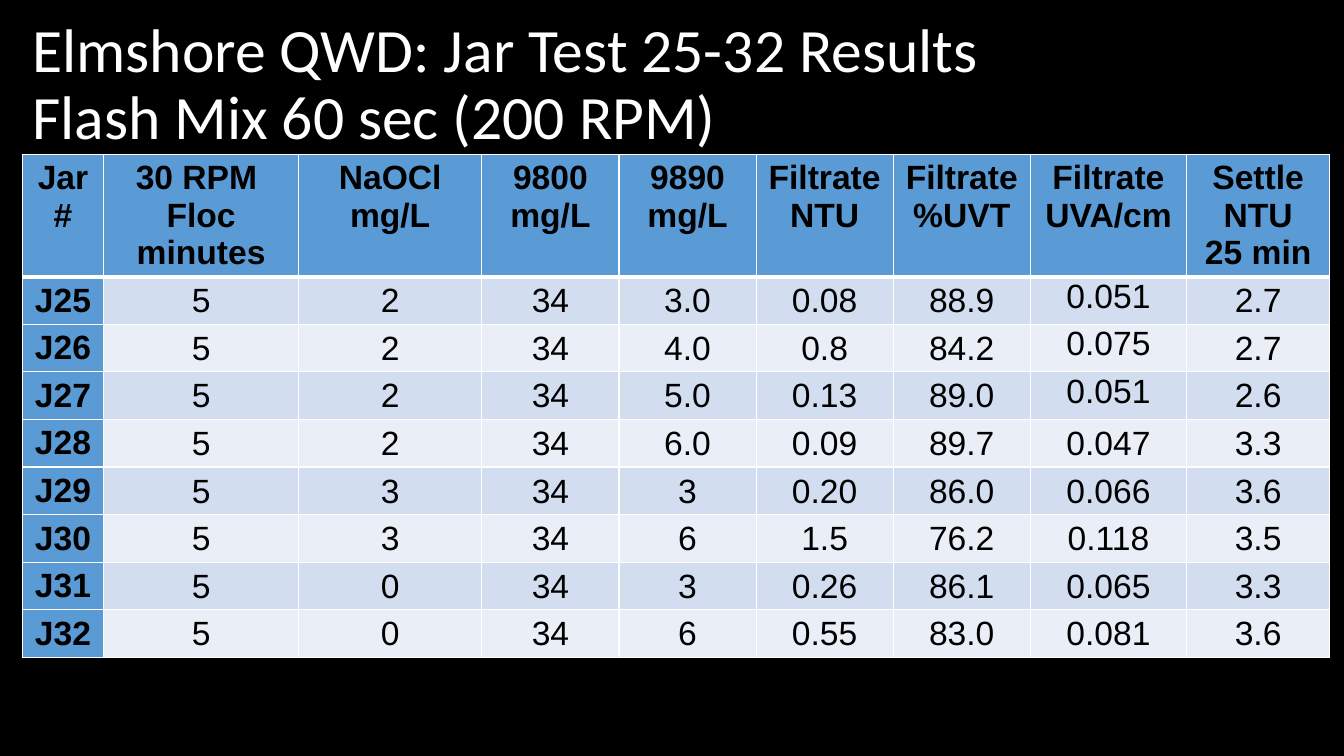
from lxml.etree import SubElement
from pptx import Presentation
from pptx.dml.color import RGBColor
from pptx.enum.text import MSO_ANCHOR, MSO_AUTO_SIZE, PP_ALIGN
from pptx.oxml.ns import qn
from pptx.util import Inches, Pt

COLORS = {
    "background": "000000",
    "title": "FFFFFF",
    "text": "000000",
    "border": "FFFFFF",
    "header": "5B9BD5",
    "odd_row": "D2DEEF",
    "even_row": "EAEFF7",
}

TITLE = "Elmshore QWD: Jar Test 25-32 Results\vFlash Mix 60 sec (200 RPM)"
# "\n" starts a paragraph, "\v" breaks a line
HEADERS = ["Jar\v#", "30 RPM \nFloc\nminutes", "NaOCl\nmg/L", "9800\nmg/L",
           "9890\nmg/L", "Filtrate\nNTU", "Filtrate\n%UVT",
           "Filtrate\nUVA/cm", "Settle\nNTU\n25 min"]
JARS = [
    ["J25", "5", "2", "34", "3.0", "0.08", "88.9", "0.051", "2.7"],
    ["J26", "5", "2", "34", "4.0", "0.8", "84.2", "0.075", "2.7"],
    ["J27", "5", "2", "34", "5.0", "0.13", "89.0", "0.051", "2.6"],
    ["J28", "5", "2", "34", "6.0", "0.09", "89.7", "0.047", "3.3"],
    ["J29", "5", "3", "34", "3", "0.20", "86.0", "0.066", "3.6"],
    ["J30", "5", "3", "34", "6", "1.5", "76.2", "0.118", "3.5"],
    ["J31", "5", "0", "34", "3", "0.26", "86.1", "0.065", "3.3"],
    ["J32", "5", "0", "34", "6", "0.55", "83.0", "0.081", "3.6"],
]
COLUMN_WIDTHS = [0.81, 1.93, 1.82, 1.36, 1.36, 1.36, 1.36, 1.55, 1.42]
ROW_HEIGHT = 0.41
UVA_COLUMN = 7
TOP_ALIGNED_UVA_ROWS = (1, 2, 3)


def write_text(frame, text, *, font, size, color, bold=False,
               align=PP_ALIGN.LEFT, line_spacing=None):
    frame.text = text
    for paragraph in frame.paragraphs:
        paragraph.alignment = align
        paragraph.line_spacing = line_spacing
        for run in paragraph.runs:
            run.font.name = font
            run.font.size = Pt(size)
            run.font.bold = bold
            run.font.color.rgb = RGBColor.from_string(COLORS[color])


def set_borders(cell, top=1, bottom=1):
    properties = cell._tc.get_or_add_tcPr()
    for tag, width in (("a:lnL", 1), ("a:lnR", 1), ("a:lnT", top), ("a:lnB", bottom)):
        line = SubElement(properties, qn(tag), w=str(Pt(width)))
        fill = SubElement(line, qn("a:solidFill"))
        SubElement(fill, qn("a:srgbClr"), val=COLORS["border"])


def fill_cell(cell, color):
    cell.fill.solid()
    cell.fill.fore_color.rgb = RGBColor.from_string(COLORS[color])


def format_value_cell(cell, anchor):
    cell.vertical_anchor = anchor
    cell.margin_left = cell.margin_top = cell.margin_right = Inches(0.01)
    cell.margin_bottom = 0


def add_title(slide):
    title = slide.shapes.title
    title.left, title.top = Inches(0.22), Inches(0.13)
    title.width, title.height = Inches(12.2), Inches(1.45)
    frame = title.text_frame
    frame.word_wrap = True
    frame.auto_size = MSO_AUTO_SIZE.NONE
    frame.vertical_anchor = MSO_ANCHOR.MIDDLE
    write_text(frame, TITLE, font="Calibri", size=44, color="title", line_spacing=0.9)


def add_results_table(slide):
    rows = [HEADERS] + JARS
    frame = slide.shapes.add_table(
        len(rows), len(HEADERS), Inches(0.22), Inches(1.53),
        Inches(sum(COLUMN_WIDTHS)), Inches(ROW_HEIGHT * len(rows)))
    table = frame.table
    table.first_col = True
    for column, width in zip(table.columns, COLUMN_WIDTHS):
        column.width = Inches(width)

    for row_index, values in enumerate(rows):
        table.rows[row_index].height = Inches(ROW_HEIGHT)
        band = "odd_row" if row_index % 2 else "even_row"
        for column_index, value in enumerate(values):
            cell = table.cell(row_index, column_index)
            is_header = row_index == 0 or column_index == 0
            # A thick rule separates the header row from the jars
            set_borders(cell, top=3 if row_index == 1 else 1,
                        bottom=3 if row_index == 0 else 1)
            fill_cell(cell, "header" if is_header else band)
            write_text(cell.text_frame, value, font="Arial", size=24, color="text",
                       bold=is_header, align=PP_ALIGN.CENTER)
            if not is_header:
                at_top = column_index == UVA_COLUMN and row_index in TOP_ALIGNED_UVA_ROWS
                format_value_cell(cell, MSO_ANCHOR.TOP if at_top else MSO_ANCHOR.MIDDLE)


def main():
    presentation = Presentation()
    presentation.slide_width = Inches(13.33)
    presentation.slide_height = Inches(7.5)
    slide = presentation.slides.add_slide(presentation.slide_layouts[5])

    # Background
    background = slide.background.fill
    background.solid()
    background.fore_color.rgb = RGBColor.from_string(COLORS["background"])

    # Content
    add_title(slide)
    add_results_table(slide)
    presentation.save("out.pptx")


if __name__ == "__main__":
    main()
